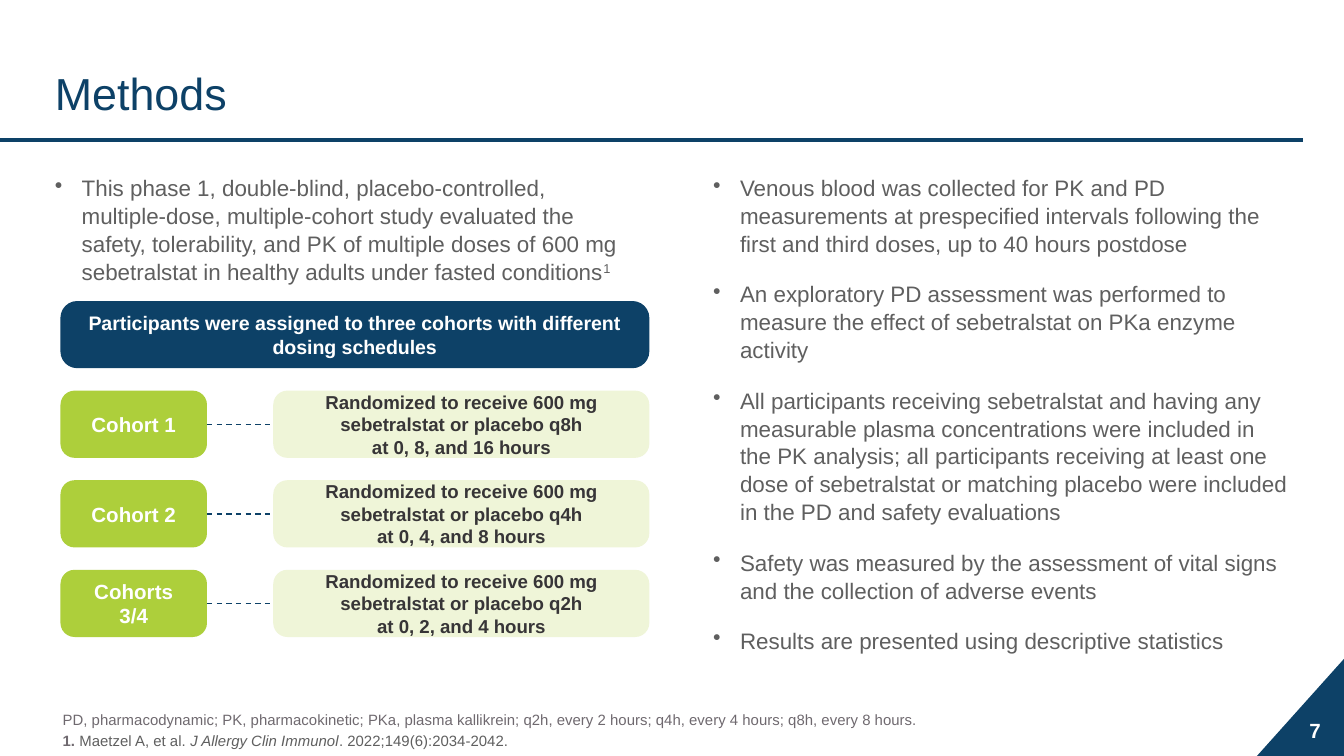
from lxml import etree
from pptx import Presentation
from pptx.dml.color import RGBColor
from pptx.enum.dml import MSO_LINE
from pptx.enum.shapes import MSO_CONNECTOR, MSO_SHAPE
from pptx.enum.text import MSO_ANCHOR, PP_ALIGN
from pptx.oxml.ns import qn
from pptx.util import Pt

TRIANGLE = MSO_SHAPE.RIGHT_TRIANGLE
ROUNDED = MSO_SHAPE.ROUNDED_RECTANGLE
STRAIGHT = MSO_CONNECTOR.STRAIGHT
DASH = MSO_LINE.DASH
TOP, MIDDLE, BOTTOM = MSO_ANCHOR.TOP, MSO_ANCHOR.MIDDLE, MSO_ANCHOR.BOTTOM
LEFT, CENTER = PP_ALIGN.LEFT, PP_ALIGN.CENTER

COLORS = {
    "navy": "0D4167",
    "green": "ADCF3B",
    "pale": "EFF5D8",
    "white": "FFFFFF",
    "dark": "373537",
    "gray": "5F5F5F",
    "note": "6F696F",
}
FORMATS = {
    "title": {"size": Pt(24), "color": "navy"},
    "number": {"size": Pt(11), "bold": True, "color": "white"},
    "body": {"size": Pt(12), "color": "gray"},
    "header": {"size": Pt(10.5), "bold": True, "color": "white"},
    "cohort": {"size": Pt(11), "bold": True, "color": "white"},
    "regimen": {"size": Pt(10), "bold": True, "color": "dark"},
    "footnote": {"size": Pt(8), "color": "note"},
    "citation": {"size": Pt(8), "color": "gray"},
    "citation number": {"size": Pt(8), "bold": True, "color": "note"},
    "journal": {"size": Pt(8), "italic": True, "color": "gray"},
}

DESIGN = [
    "This phase 1, double-blind, placebo-controlled, multiple-dose, "
    "multiple-cohort study evaluated the safety, tolerability, and PK of "
    "multiple doses of 600 mg sebetralstat in healthy adults under fasted conditions",
]
MEASURES = [
    "Venous blood was collected for PK and PD measurements at prespecified "
    "intervals following the first and third doses, up to 40 hours postdose",
    "An exploratory PD assessment was performed to measure the effect of "
    "sebetralstat on PKa enzyme activity",
    "All participants receiving sebetralstat and having any measurable plasma "
    "concentrations were included in the PK analysis; all participants receiving "
    "at least one dose of sebetralstat or matching placebo were included in the "
    "PD and safety evaluations",
    "Safety was measured by the assessment of vital signs and the collection of "
    "adverse events",
    "Results are presented using descriptive statistics",
]
COHORTS = [
    ("Cohort 1", "q8h", "0, 8, and 16"),
    ("Cohort 2", "q4h", "0, 4, and 8"),
    ("Cohorts 3/4", "q2h", "0, 2, and 4"),
]
FOOTNOTES = [
    [("PD, pharmacodynamic; PK, pharmacokinetic; PKa, plasma kallikrein; "
      "q2h, every 2 hours; q4h, every 4 hours; q8h, every 8 hours.", "footnote")],
    [("1. ", "citation number"), ("Maetzel A, et al. ", "citation"),
     ("J Allergy Clin Immunol", "journal"), (". 2022;149(6):2034-2042.", "citation")],
]


def color(name):
    """Return the named colour."""
    return RGBColor.from_string(COLORS[name])


def add_run(paragraph, text, style):
    """Add a run in a named format."""
    run = paragraph.add_run()
    run.text = text
    run.font.name = "Arial"
    for key, value in FORMATS[style].items():
        if key == "color":
            run.font.color.rgb = color(value)
        else:
            setattr(run.font, key, value)
    return run


def write(shape, paragraphs, anchor, alignment):
    """Fill a shape with paragraphs, each a list of text and format pairs."""
    frame = shape.text_frame
    frame.word_wrap = True
    frame.vertical_anchor = anchor
    for index, runs in enumerate(paragraphs):
        paragraph = frame.add_paragraph() if index else frame.paragraphs[0]
        paragraph.alignment = alignment
        for text, style in runs:
            for part, line in enumerate(text.split("\n")):
                if part:
                    paragraph.add_line_break()
                add_run(paragraph, line, style)
    return frame


def add_text(slide, box, paragraphs, anchor=TOP, alignment=LEFT):
    """Add a text box and return its text frame."""
    shape = slide.shapes.add_textbox(*map(Pt, box))
    return write(shape, paragraphs, anchor, alignment)


def add_block(slide, kind, box, fill):
    """Add a plain filled shape."""
    shape = slide.shapes.add_shape(kind, *map(Pt, box))
    shape.shadow.inherit = False
    shape.fill.solid()
    shape.fill.fore_color.rgb = color(fill)
    shape.line.fill.background()
    return shape


def add_card(slide, box, text, fill, style, corner=0.21):
    """Add a rounded box with centred text."""
    card = add_block(slide, ROUNDED, box, fill)
    card.adjustments[0] = corner
    write(card, [[(text, style)]], MIDDLE, CENTER)


def add_rule(slide, start, end, y, width, dash=None):
    """Add a horizontal navy line."""
    rule = slide.shapes.add_connector(STRAIGHT, Pt(start), Pt(y), Pt(end), Pt(y))
    rule.line.color.rgb = color("navy")
    rule.line.width = Pt(width)
    rule.line.dash_style = dash
    etree.SubElement(rule._element.spPr, qn("a:effectLst"))


def add_heading(slide, box, text):
    """Add the title and the rule below it."""
    left, top, width, height = box
    add_text(slide, box, [[(text, "title")]], BOTTOM)
    add_rule(slide, 0, left + width, top + height + 7.2, 2)


def add_page_corner(slide, box, number):
    """Add the corner triangle with the page number."""
    left, top, width, height = box
    shift = (height - width) / 2
    triangle = add_block(slide, TRIANGLE, (left - shift, top + shift, height, width), "navy")
    triangle.rotation = 270
    number_box = (left + width - 31, top + 27.3, 31, 21.6)
    add_text(slide, number_box, [[(number, "number")]], MIDDLE, CENTER)


def add_bullets(slide, box, items):
    """Add a bulleted list and return its paragraphs."""
    frame = add_text(slide, box, [[(item, "body")] for item in items])
    for paragraph in frame.paragraphs:
        properties = paragraph._p.get_or_add_pPr()
        properties.set("marL", str(Pt(14.4)))
        properties.set("indent", str(-Pt(14.4)))
        etree.SubElement(properties, qn("a:buChar"), char="•")
        paragraph.line_spacing = 1.04
        paragraph.space_after = Pt(12)
    return frame.paragraphs


def add_cohorts(slide, box, heading, cohorts):
    """Add the header bar and one row per cohort."""
    left, top, width, height = box
    card_height, label_width, gap = 36, 78.5, 35.5
    pitch = (height - card_height) / len(cohorts)
    add_card(slide, (left, top, width, card_height), heading, "navy", "header", 0.25)
    for row, (label, interval, hours) in enumerate(cohorts, 1):
        y = top + row * pitch
        label_end = left + label_width
        start = label_end + gap
        text = f"Randomized to receive 600 mg sebetralstat or placebo {interval}\nat {hours} hours"
        add_card(slide, (start, y, left + width - start, card_height), text, "pale", "regimen")
        add_card(slide, (left, y, label_width, card_height), label, "green", "cohort")
        add_rule(slide, label_end, start, y + card_height / 2, 0.75, DASH)


def add_footnotes(slide, box, notes):
    """Add the abbreviations and the reference."""
    for paragraph in add_text(slide, box, notes, BOTTOM).paragraphs:
        paragraph.line_spacing = 1.15


def main():
    """Build the methods slide."""
    presentation = Presentation()
    presentation.slide_width, presentation.slide_height = Pt(720), Pt(405)
    slide = presentation.slides.add_slide(presentation.slide_layouts[6])
    add_page_corner(slide, (672.5, 353, 47.5, 53), "7")
    add_heading(slide, (22.3, 14.4, 675.7, 53.3), "Methods")
    design = add_bullets(slide, (22.3, 89.3, 324, 65.5), DESIGN)
    reference = add_run(design[0], "1", "body")
    reference.font._element.set("baseline", "30000")
    add_cohorts(slide, (32.4, 161.3, 315.5, 180), 
                "Participants were assigned to three cohorts with different dosing schedules", COHORTS)
    add_bullets(slide, (375, 89.3, 324, 259), MEASURES)
    add_footnotes(slide, (26.5, 376, 667.5, 29), FOOTNOTES)
    presentation.save("out.pptx")


if __name__ == "__main__":
    main()
